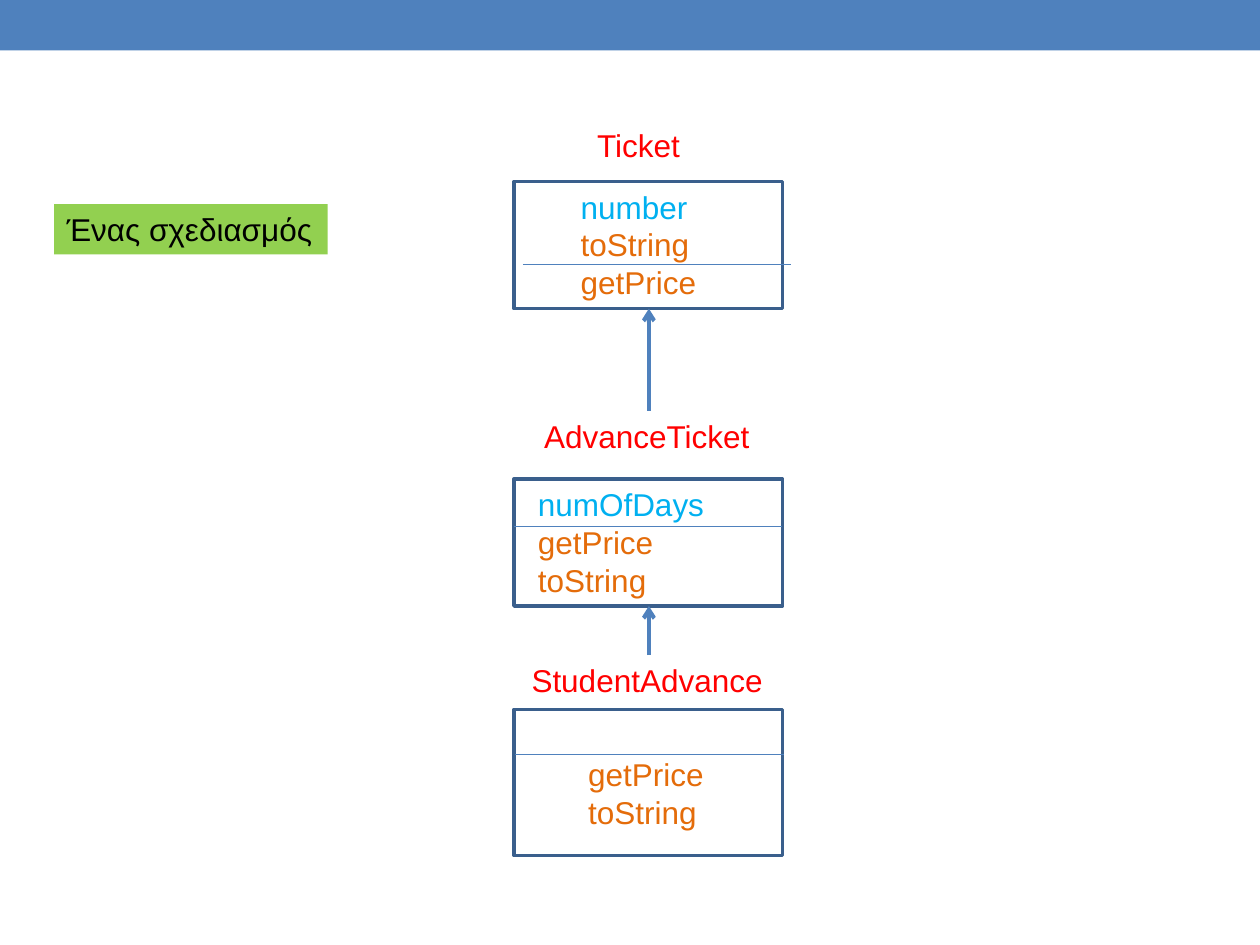
from dataclasses import dataclass

from lxml import etree
from pptx import Presentation
from pptx.dml.color import RGBColor
from pptx.enum.shapes import MSO_CONNECTOR, MSO_SHAPE
from pptx.enum.text import MSO_ANCHOR, MSO_AUTO_SIZE, PP_ALIGN
from pptx.oxml.ns import qn
from pptx.util import Inches, Pt

RECT, STRAIGHT = MSO_SHAPE.RECTANGLE, MSO_CONNECTOR.STRAIGHT
TOP, BOTTOM = MSO_ANCHOR.TOP, MSO_ANCHOR.BOTTOM
GROW, FIXED = MSO_AUTO_SIZE.SHAPE_TO_FIT_TEXT, MSO_AUTO_SIZE.NONE
LEFT = PP_ALIGN.LEFT


@dataclass(frozen=True)
class Theme:
    font: str = "Arial"
    size: float = 18
    accent: str = "4F81BD"
    border: str = "3A5F8C"
    label: str = "92D050"
    name: str = "FF0000"
    field: str = "00B0F0"
    method: str = "E46C0A"
    ink: str = "000000"
    border_width: float = 2.08
    divider_width: float = 0.75
    arrow_width: float = 2.25


THEME = Theme()

# The slide is a grid of 100 columns by 75 rows
COLS, ROWS = 100, 75
CELL = Inches(0.1)
BOX_X, BOX_W = 40.8, 21.3
AXIS = 51.5
LINE_H = 4

# Name (x, y, width), box (y, height), text (x, width), divider (x, y)
CLASSES = [
    dict(name="Ticket", title=(46.4, 9.5, 8.7), box=(14.4, 10.1),
         text=(45.1, 11.4), divider=(41.5, 21),
         fields=["number"], methods=["toString", "getPrice"]),
    dict(name="AdvanceTicket", title=(42.2, 32.6, 18.5), box=(38, 10.1),
         text=(41.7, 15.3), divider=(40.8, 41.8),
         fields=["numOfDays"], methods=["getPrice", "toString"]),
    dict(name="StudentAdvance", title=(41.2, 52, 20.5), box=(56.3, 11.6),
         text=(45.7, 11.3), divider=(40.9, 59.9),
         fields=[], methods=["getPrice", "toString"]),
]
TEXT_H = 10.1


def grid(*cells):
    return [int(c * CELL) for c in cells]


def rgb(color):
    return RGBColor.from_string(color)


def add_box(s, x, y, w, h, fill=None, line=None):
    sp = s.shapes.add_shape(RECT, *grid(x, y, w, h))
    sp.shadow.inherit = False
    if fill:
        sp.fill.solid()
        sp.fill.fore_color.rgb = rgb(fill)
    else:
        sp.fill.background()
    if line:
        sp.line.color.rgb = rgb(line)
        sp.line.width = Pt(THEME.border_width)
    else:
        sp.line.fill.background()
    return sp


def write(sp, lines, anchor=TOP, auto_size=GROW):
    """Fill a shape with (text, colour) lines."""
    tf = sp.text_frame
    tf.word_wrap = False
    tf.auto_size = auto_size
    tf.vertical_anchor = anchor
    for i, (text, color) in enumerate(lines):
        p = tf.add_paragraph() if i else tf.paragraphs[0]
        p.alignment = LEFT
        r = p.add_run()
        r.text = text
        r.font.name = THEME.font
        r.font.size = Pt(THEME.size)
        r.font.color.rgb = rgb(color)


def add_text(s, x, y, w, h, lines, **fmt):
    write(s.shapes.add_textbox(*grid(x, y, w, h)), lines, **fmt)


def add_line(s, x1, y1, x2, y2, width, arrow=False):
    cx = s.shapes.add_connector(STRAIGHT, *grid(x1, y1, x2, y2))
    cx.line.color.rgb = rgb(THEME.accent)
    cx.line.width = Pt(width)
    if arrow:
        etree.SubElement(cx.line._get_or_add_ln(), qn("a:tailEnd"), type="arrow")
    etree.SubElement(cx._element.spPr, qn("a:effectLst"))


def add_class(s, name, title, box, text, divider, fields, methods):
    (x, y, w), (box_y, box_h), (text_x, text_w) = title, box, text
    add_box(s, BOX_X, box_y, BOX_W, box_h, line=THEME.border)
    # Without fields, the methods sit at the foot of the text area
    fmt = {} if fields else dict(anchor=BOTTOM, auto_size=FIXED)
    members = [(f, THEME.field) for f in fields] + [(m, THEME.method) for m in methods]
    add_text(s, text_x, box_y, text_w, TEXT_H, members, **fmt)
    add_text(s, x, y, w, LINE_H, [(name, THEME.name)])
    div_x, div_y = divider
    add_line(s, div_x, div_y, div_x + BOX_W, div_y, THEME.divider_width)


def main():
    prs = Presentation()
    prs.slide_width, prs.slide_height = grid(COLS, ROWS)
    s = prs.slides.add_slide(prs.slide_layouts[6])

    # Top band and label
    add_box(s, 0, 0, COLS, LINE_H, fill=THEME.accent)
    label = add_box(s, 4.3, 16.2, 21.7, LINE_H, fill=THEME.label)
    write(label, [("Ένας σχεδιασμός", THEME.ink)])

    # Classes
    for item in CLASSES:
        add_class(s, **item)

    # Inheritance arrows, from each child's name to its parent's box
    for parent, child in zip(CLASSES, CLASSES[1:]):
        add_line(s, AXIS, child["title"][1], AXIS, sum(parent["box"]),
                 THEME.arrow_width, arrow=True)

    prs.save("out.pptx")


if __name__ == "__main__":
    main()
